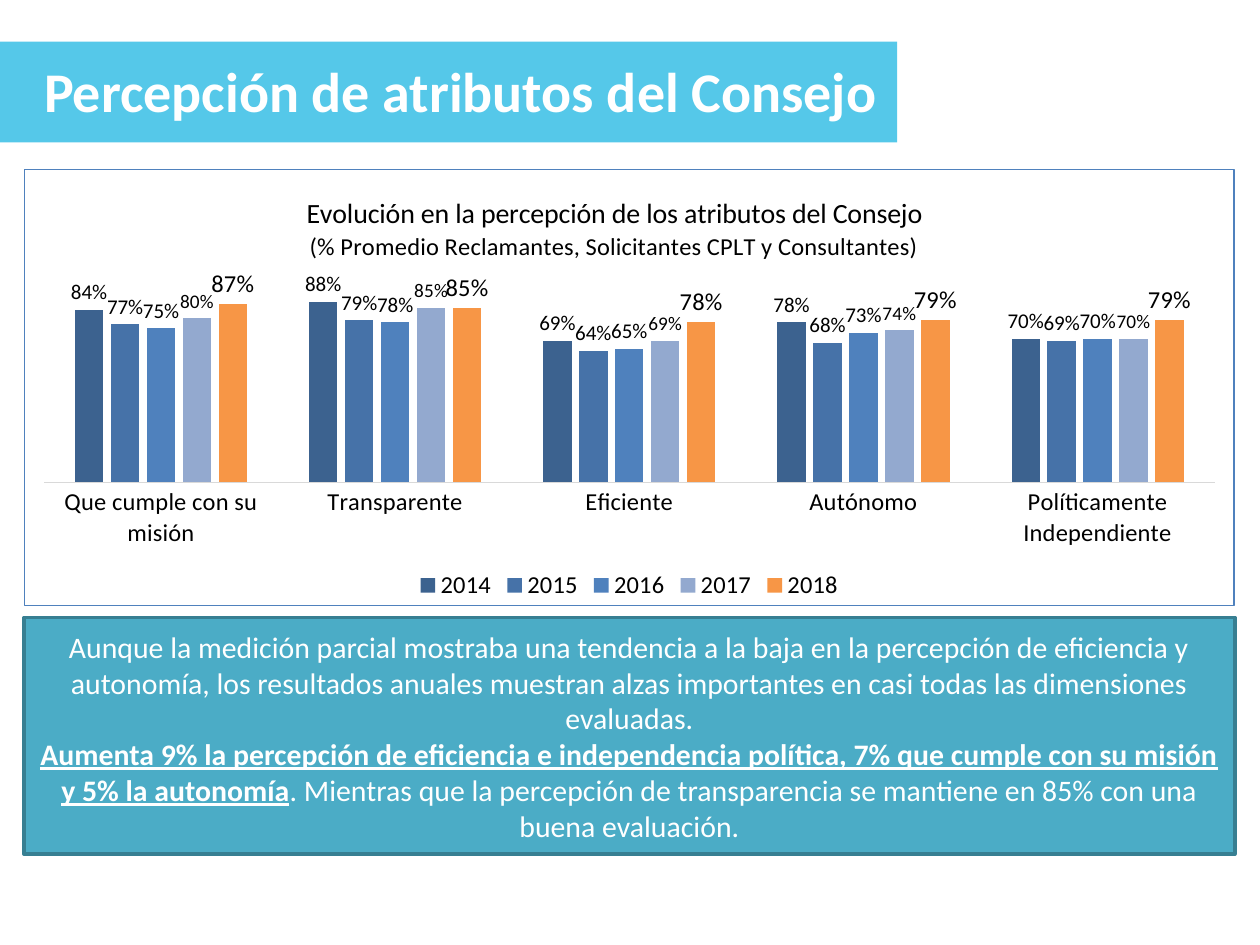
from dataclasses import dataclass
from lxml.etree import SubElement
from pptx import Presentation
from pptx.chart.data import CategoryChartData as ChartData
from pptx.dml.color import RGBColor as Color
from pptx.enum.chart import XL_CHART_TYPE as Kind, XL_LABEL_POSITION as Spot
from pptx.enum.chart import XL_LEGEND_POSITION as Side, XL_TICK_MARK as Tick
from pptx.enum.shapes import MSO_SHAPE as Shape
from pptx.enum.text import MSO_ANCHOR as Anchor, PP_ALIGN as Align
from pptx.oxml import parse_xml
from pptx.oxml.ns import nsdecls, qn
from pptx.util import Inches, Pt


@dataclass(frozen=True)
class Theme:
    """Colours and type sizes of the slide."""
    face: str = "Calibri"
    white: str = "FFFFFF"
    black: str = "000000"
    band: str = "55C8E9"
    note: str = "4BACC6"
    edge: str = "377F92"
    frame: str = "4F81BD"
    axis: str = "D9D9D9"
    head: int = 32
    lead: int = 16
    text: int = 17
    label: int = 14


THEME = Theme()
CATS = ["Que cumple con su misión", "Transparente", "Eficiente", "Autónomo",
        "Políticamente Independiente"]
YEARS = [
    ("2014", [0.84, 0.88, 0.69, 0.78, 0.70], "3C628F", 12),
    ("2015", [0.77, 0.79, 0.64, 0.68, 0.69], "4672A8", 12),
    ("2016", [0.75, 0.78, 0.65, 0.73, 0.70], "4F81BD", 12),
    ("2017", [0.80, 0.85, 0.69, 0.74, 0.70], "93A9CF", 11),
    ("2018", [0.87, 0.85, 0.78, 0.79, 0.79], "F79646", 14),
]
HEADS = [
    ("Evolución en la percepción de los atributos del Consejo", THEME.lead),
    ("(% Promedio Reclamantes, Solicitantes CPLT y Consultantes)", THEME.label),
]
NOTES = [
    [("Aunque la medición parcial mostraba una tendencia a la baja en la "
      "percepción de eficiencia y autonomía, los resultados anuales muestran "
      "alzas importantes en casi todas las dimensiones evaluadas.", False)],
    [("Aumenta 9% la percepción de eficiencia e independencia política, 7% que "
      "cumple con su misión y 5% la autonomía", True),
     (". Mientras que la percepción de transparencia se mantiene en 85% con "
      "una buena evaluación.", False)],
]


def style(font, size, color, bold=False):
    """Set the face, size, colour and weight of a font."""
    font.name, font.size, font.bold = THEME.face, Pt(size), bold
    font.color.rgb = Color.from_string(color)


def add_rect(slide, box, fill):
    """Add a flat rectangle without an outline."""
    rect = slide.shapes.add_shape(Shape.RECTANGLE, *map(Inches, box))
    rect.shadow.inherit = False
    rect.fill.solid()
    rect.fill.fore_color.rgb = Color.from_string(fill)
    rect.line.fill.background()
    return rect


def add_head(slide, box):
    """Place the title on its coloured band."""
    left, top, width, height = box
    title = slide.shapes.title
    band = add_rect(slide, box, THEME.band)
    title.element.addprevious(band.element)
    title.left, title.top = Inches(left + 0.25), Inches(top + 0.07)
    title.width, title.height = Inches(width - 0.25), Inches(height - 0.16)
    frame = title.text_frame
    frame.word_wrap = False
    frame.vertical_anchor = Anchor.TOP
    para = frame.paragraphs[0]
    para.alignment = Align.LEFT
    run = para.add_run()
    run.text = "Percepción de atributos del Consejo"
    style(run.font, THEME.head, THEME.white, True)


def set_layout(part, index, **spots):
    """Give a chart part a manual layout."""
    old = part.find(qn("c:layout"))
    if old is not None:
        part.remove(old)
    layout = parse_xml(f"<c:layout {nsdecls('c')}/>")
    manual = SubElement(layout, qn("c:manualLayout"))
    for name, value in spots.items():
        SubElement(manual, qn(f"c:{name}")).set("val", str(value))
    part.insert(index, layout)


def add_title(chart):
    """Write the two lines of the chart title."""
    frame = chart.chart_title.text_frame
    for row, (text, size) in enumerate(HEADS):
        para = frame.add_paragraph() if row else frame.paragraphs[0]
        para.alignment = Align.CENTER
        run = para.add_run()
        run.text = text
        style(run.font, size, THEME.black)
    set_layout(chart.chart_title._element, 1, xMode="edge", yMode="edge",
               x=0.23, y=0.05)


def add_bars(slide, box):
    """Place the framed column chart of the five years."""
    data = ChartData(number_format="0%")
    data.categories = CATS
    for name, vals, *_ in YEARS:
        data.add_series(name, vals)
    chart = slide.shapes.add_chart(
        Kind.COLUMN_CLUSTERED, *map(Inches, box), data).chart
    style(chart.font, THEME.label, THEME.black)
    add_title(chart)
    plot = chart.plots[0]
    plot.gap_width, plot.overlap, plot.vary_by_categories = 219, -27, False
    for bars, (_, _, color, size) in zip(plot.series, YEARS):
        bars.format.fill.solid()
        bars.format.fill.fore_color.rgb = Color.from_string(color)
        labels = bars.data_labels
        labels.show_value = True
        labels.number_format, labels.number_format_is_linked = "0%", False
        labels.position = Spot.OUTSIDE_END
        style(labels.font, size, THEME.black)
    cats, vals = chart.category_axis, chart.value_axis
    cats.major_tick_mark = cats.minor_tick_mark = Tick.NONE
    cats.format.line.color.rgb = Color.from_string(THEME.axis)
    cats.format.line.width = Pt(0.75)
    style(cats.tick_labels.font, THEME.label, THEME.black)
    vals.visible = vals.has_major_gridlines = False
    vals.minimum_scale, vals.maximum_scale = 0, 1
    chart.has_legend = True
    chart.legend.position = Side.BOTTOM
    chart.legend.include_in_layout = False
    style(chart.legend.font, THEME.label, THEME.black)
    root = chart.element.find(qn("c:chart"))
    set_layout(root.find(qn("c:plotArea")), 0, layoutTarget="inner",
               xMode="edge", yMode="edge", x=0.016, y=0.247, w=0.968, h=0.471)
    root.addnext(parse_xml(
        f'<c:spPr {nsdecls("c", "a")}><a:noFill/><a:ln w="{Pt(0.75)}"><a:solidFill>'
        f'<a:srgbClr val="{THEME.frame}"/></a:solidFill></a:ln></c:spPr>'))


def add_note(slide, box):
    """Place the box with the conclusions."""
    rect = add_rect(slide, box, THEME.note)
    rect.line.color.rgb = Color.from_string(THEME.edge)
    rect.line.width = Pt(2)
    frame = rect.text_frame
    frame.word_wrap = True
    frame.vertical_anchor = Anchor.MIDDLE
    for row, parts in enumerate(NOTES):
        para = frame.add_paragraph() if row else frame.paragraphs[0]
        para.alignment = Align.CENTER
        for text, strong in parts:
            run = para.add_run()
            run.text = text
            style(run.font, THEME.text, THEME.white, strong)
            run.font.underline = strong


def main():
    """Build and save the slide."""
    deck = Presentation()
    deck.slide_width, deck.slide_height = Inches(10), Inches(7.5)
    slide = deck.slides.add_slide(deck.slide_layouts[5])
    add_head(slide, (0, 0.33, 7.12, 0.8))
    add_note(slide, (0.19, 4.9, 9.61, 1.88))
    add_bars(slide, (0.19, 1.34, 9.61, 3.47))
    deck.save("out.pptx")


if __name__ == "__main__":
    main()
